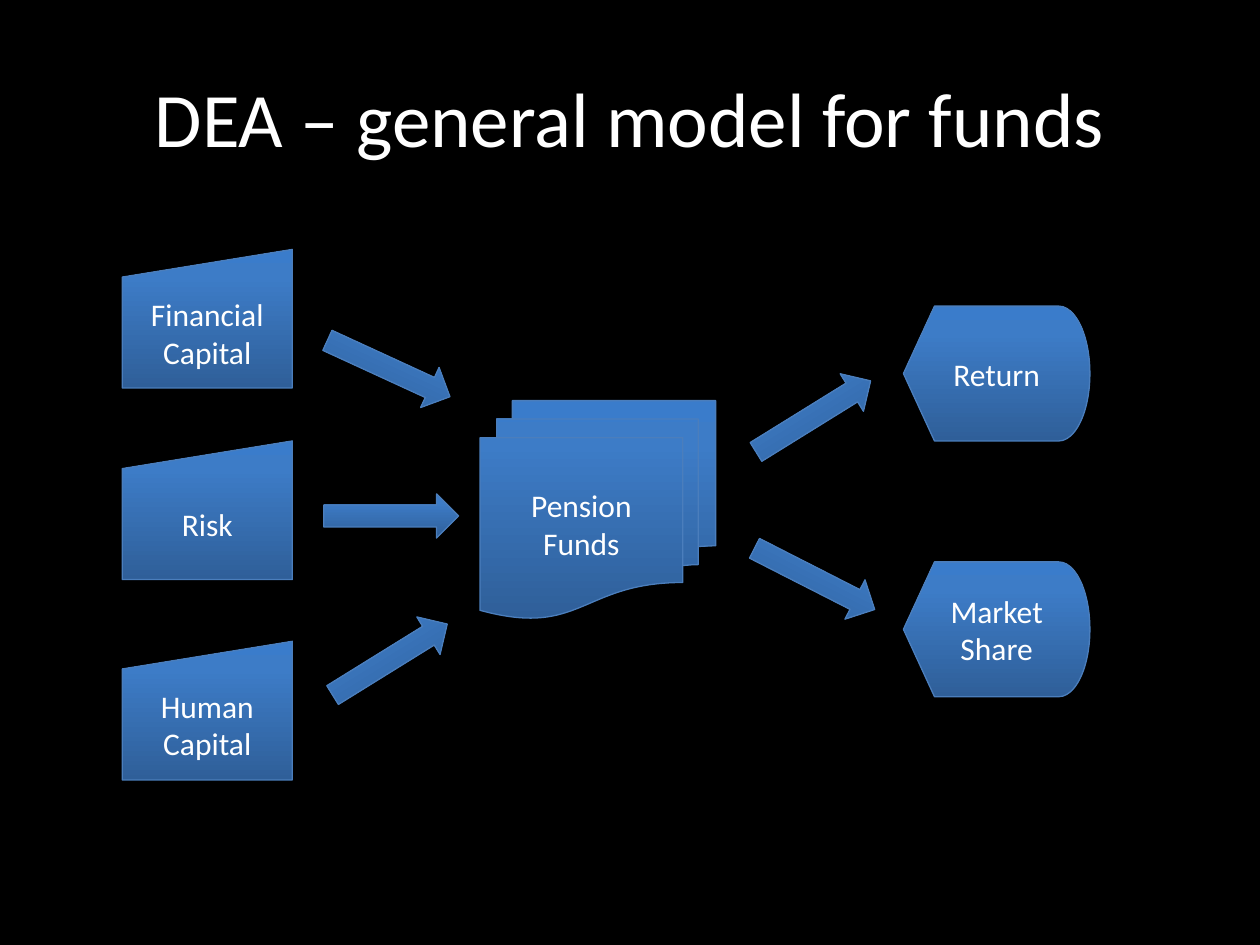
"""Build a slide that shows a general DEA model for pension funds."""
from copy import deepcopy

from pptx import Presentation
from pptx import util as u
from pptx.dml.color import RGBColor
from pptx.enum import shapes, text
from pptx.oxml.ns import qn

HUES = {"back": "000000", "text": "FFFFFF", "line": "4B7EBC",
        "low": "2F5F99", "mid": "3D7CC7", "top": "3A7CCB"}
STOPS = [(0, "low"), (0.8, "mid"), (1, "top")]
FONT = "Calibri"
TITLE = "DEA – general model for funds"
KIND = shapes.MSO_SHAPE

GROUPS = [
    (KIND.FLOWCHART_MANUAL_INPUT, 0.97, (1.35, 1.1),
     [("Financial Capital", 1.98), ("Risk", 3.5), ("Human Capital", 5.09)]),
    (KIND.FLOWCHART_MULTIDOCUMENT, 3.81, (1.87, 1.73),
     [("Pension Funds", 3.18)]),
    (KIND.FLOWCHART_DISPLAY, 7.17, (1.48, 1.07),
     [("Return", 2.43), ("Market Share", 4.46)]),
]
ARROWS = [(2.55, 2.75, 24.7), (2.57, 3.92, 0), (2.56, 5.06, 328.2),
          (5.93, 4.42, 27), (5.92, 3.13, 328.2)]
ARROW_SIZE = (1.07, 0.35)


def color(name):
    return RGBColor.from_string(HUES[name])


def write(shape, words, size):
    frame = shape.text_frame
    frame.word_wrap = True
    frame.vertical_anchor = text.MSO_ANCHOR.MIDDLE
    para = frame.paragraphs[0]
    para.text = words
    para.alignment = text.PP_ALIGN.CENTER
    para.font.name = FONT
    para.font.size = u.Pt(size)
    para.font.color.rgb = color("text")


def draw(slide, kind, *box):
    shape = slide.shapes.add_shape(kind, *map(u.Inches, box))
    shape.shadow.inherit = False
    shape.line.color.rgb = color("line")
    shape.line.width = u.Pt(0.75)
    fill = shape.fill
    fill.gradient()
    fill.gradient_angle = 90
    stops = shape._element.spPr.find(".//" + qn("a:gsLst"))
    stops.append(deepcopy(stops[-1]))
    for stop, (place, name) in zip(fill.gradient_stops, STOPS):
        stop.position = place
        stop.color.rgb = color(name)
    return shape


def main():
    deck = Presentation()
    deck.slide_width, deck.slide_height = u.Inches(10), u.Inches(7.5)
    slide = deck.slides.add_slide(deck.slide_layouts[6])
    slide.background.fill.solid()
    slide.background.fill.fore_color.rgb = color("back")

    title = slide.shapes.add_textbox(*map(u.Inches, (0.5, 0.3, 9, 1.25)))
    write(title, TITLE, 44)
    for kind, left, size, items in GROUPS:
        for words, top in items:
            write(draw(slide, kind, left, top, *size), words, 18)
    for left, top, turn in ARROWS:
        arrow = draw(slide, KIND.RIGHT_ARROW, left, top, *ARROW_SIZE)
        arrow.rotation = turn

    deck.save("out.pptx")


if __name__ == "__main__":
    main()
